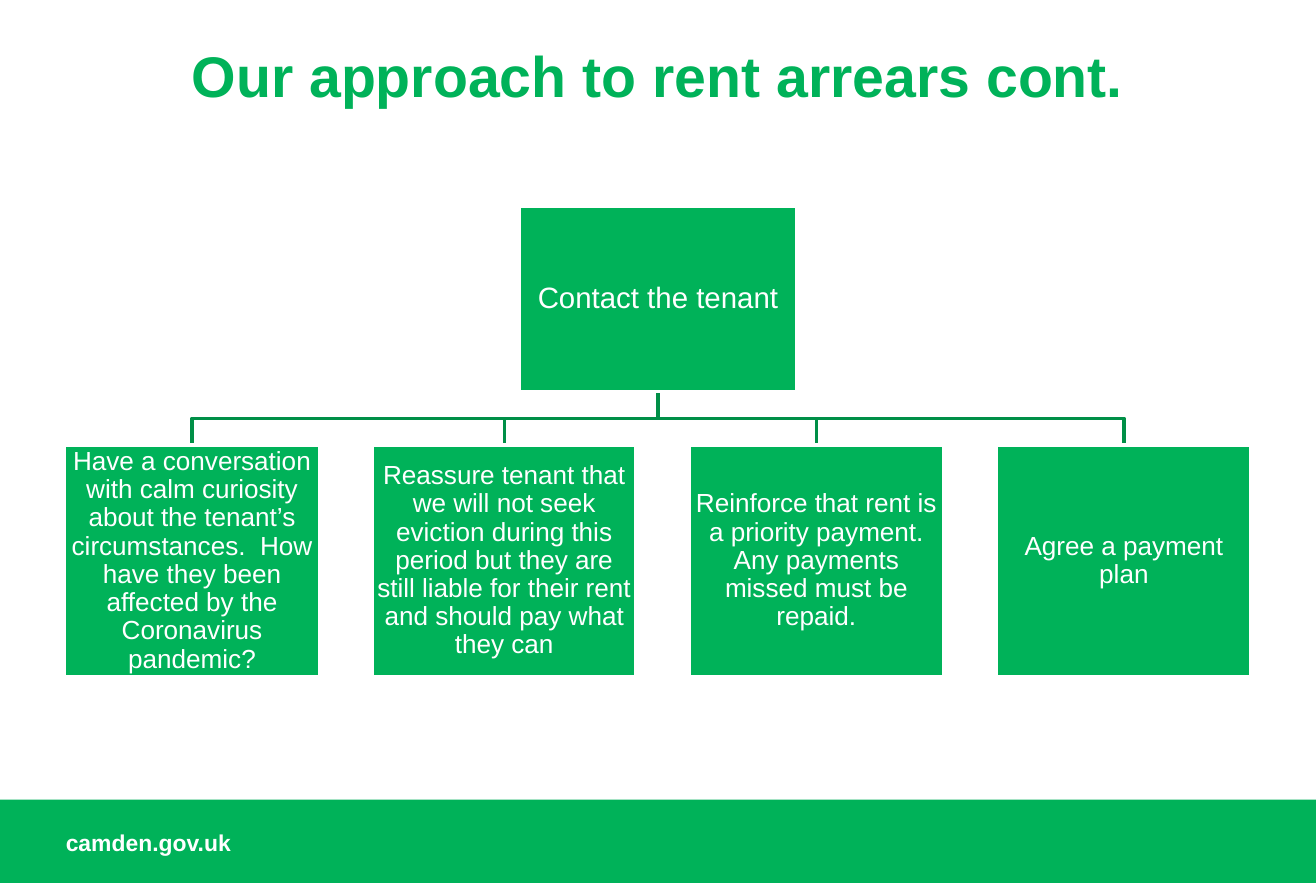
from pptx import Presentation
from pptx.dml.color import RGBColor
from pptx.enum.shapes import MSO_SHAPE as Shape
from pptx.enum.text import MSO_ANCHOR as Anchor, PP_ALIGN as Align
from pptx.util import Cm, Pt

GREEN = RGBColor(0x00, 0xB2, 0x59)
DARK_GREEN = RGBColor(0x00, 0x8F, 0x47)
WHITE = RGBColor(0xFF, 0xFF, 0xFF)

STEPS = [
    (5.49, "Have a conversation with calm curiosity about the tenant’s circumstances.  "
           "How have they been affected by the Coronavirus pandemic?"),
    (5.69, "Reassure tenant that we will not seek eviction during this period but they "
           "are still liable for their rent and should pay what they can"),
    (5.49, "Reinforce that rent is a priority payment. Any payments missed must be repaid."),
    (5.49, "Agree a payment plan"),
]


def write(holder, text, size, color, align=Align.LEFT, bold=False, inset=0.0, anchor=Anchor.TOP):
    """Fill a shape or text box with one run of text and return its paragraph."""
    frame = holder.text_frame
    frame.word_wrap = True
    frame.vertical_anchor = anchor
    frame.margin_left = frame.margin_right = Cm(inset)
    frame.margin_top = frame.margin_bottom = Cm(inset)
    paragraph = frame.paragraphs[0]
    paragraph.alignment = align
    run = paragraph.add_run()
    run.text = text
    run.font.name = "Arial"
    run.font.size = Pt(size)
    run.font.bold = bold
    run.font.color.rgb = color
    return paragraph


def green_block(slide, left, top, width, height):
    """Add a plain green rectangle."""
    block = slide.shapes.add_shape(Shape.RECTANGLE, Cm(left), Cm(top), Cm(width), Cm(height))
    block.shadow.inherit = False
    block.fill.solid()
    block.fill.fore_color.rgb = GREEN
    block.line.fill.background()
    return block


def add_title(slide, left, top, width, height):
    """Add the slide heading."""
    heading = slide.shapes.add_textbox(Cm(left), Cm(top), Cm(width), Cm(height))
    write(heading, "Our approach to rent arrears cont.", 35, GREEN, Align.CENTER, True)
    heading.text_frame.margin_top = Cm(0.1)


def add_footer(slide, left, top, width, height):
    """Add the green band with the web address."""
    green_block(slide, left, top, width, height)
    address = slide.shapes.add_textbox(Cm(left + 1.42), Cm(top + 0.63), Cm(11.7), Cm(0.6))
    write(address, "camden.gov.uk", 14, WHITE, bold=True)


def add_step(slide, left, top, width, height, text, size):
    """Add one white-edged box of the chart."""
    step = green_block(slide, left, top, width, height)
    step.line.color.rgb = WHITE
    step.line.width = Pt(2)
    paragraph = write(step, text, size, WHITE, Align.CENTER, inset=0.03, anchor=Anchor.MIDDLE)
    paragraph.line_spacing = 0.9


def add_branch(slide, start_x, start_y, end_x, end_y):
    """Add the bent line from the first box down to a step."""
    middle_y = (start_y + end_y) / 2
    outline = slide.shapes.build_freeform(Cm(start_x), Cm(start_y))
    bends = [(start_x, middle_y), (end_x, middle_y), (end_x, end_y)]
    outline.add_line_segments([(Cm(x), Cm(y)) for x, y in bends], close=False)
    branch = outline.convert_to_shape()
    branch.shadow.inherit = False
    branch.fill.background()
    branch.line.color.rgb = DARK_GREEN
    branch.line.width = Pt(2)


def add_approach_chart(slide, left, top, width, height):
    """Add the contact box, its branches and the four steps below."""
    contact_width, contact_height, step_height = 6, 4, 5
    center = left + width / 2
    step_top = top + height - step_height
    gap = (width - sum(step_width for step_width, _ in STEPS)) / (len(STEPS) - 1)
    step_left = left
    for step_width, text in STEPS:
        add_branch(slide, center, top + contact_height, step_left + step_width / 2, step_top)
        add_step(slide, step_left, step_top, step_width, step_height, text, 16)
        step_left += step_width + gap
    add_step(slide, center - contact_width / 2, top, contact_width, contact_height,
             "Contact the tenant", 18)


def main():
    """Build and save the slide."""
    deck = Presentation()
    deck.slide_width, deck.slide_height = Cm(28.4), Cm(19.05)
    slide = deck.slides.add_slide(deck.slide_layouts[6])
    add_footer(slide, 0, 17.25, 28.4, 1.8)
    add_approach_chart(slide, 1.4, 4.45, 25.6, 10.15)
    add_title(slide, 1.42, 0.76, 25.56, 2)
    deck.save("out.pptx")


if __name__ == "__main__":
    main()
